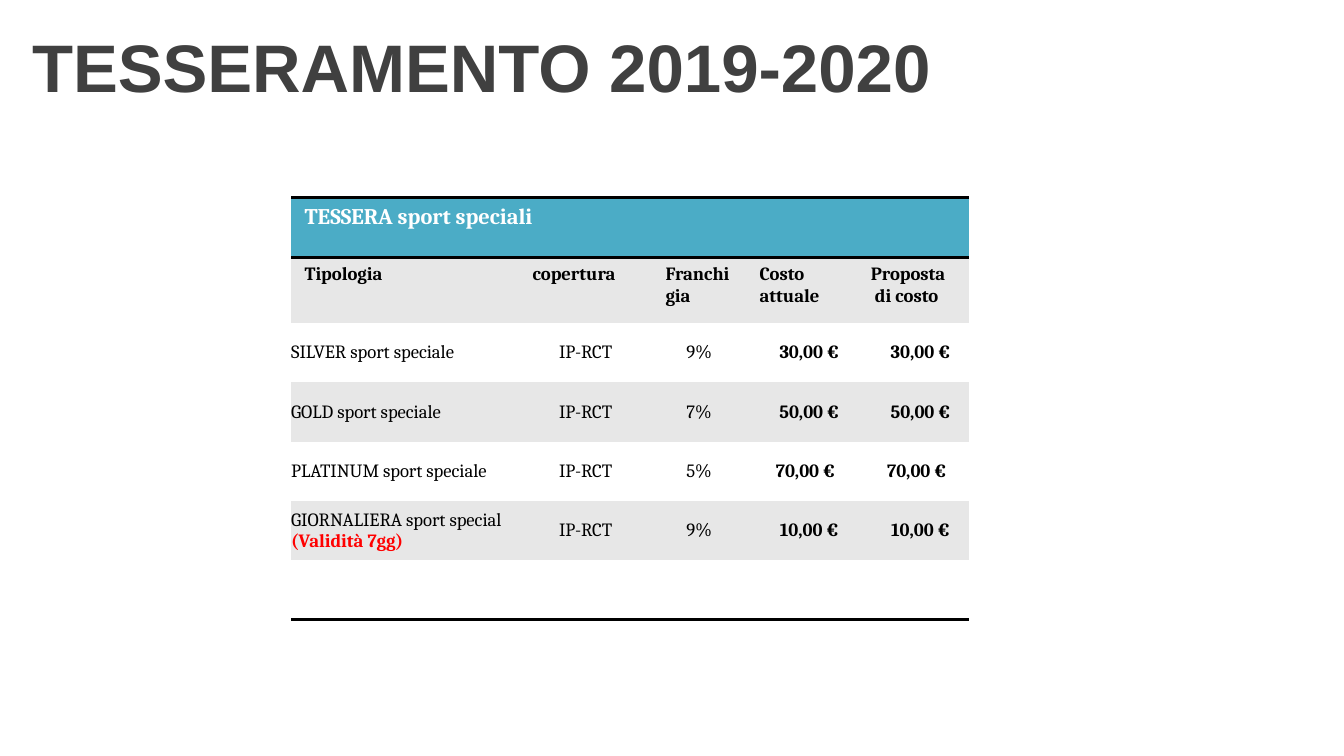
from dataclasses import dataclass

from lxml import etree
from pptx import Presentation
from pptx.dml.color import RGBColor
from pptx.enum.text import MSO_ANCHOR, PP_ALIGN
from pptx.oxml.ns import qn
from pptx.util import Pt

LEFT, CENTER = PP_ALIGN.LEFT, PP_ALIGN.CENTER
TOP, MIDDLE = MSO_ANCHOR.TOP, MSO_ANCHOR.MIDDLE

COLORS = {
    "title": "404040",
    "banner": "4BACC6",
    "band": "E7E7E7",
    "white": "FFFFFF",
    "black": "000000",
    "validity": "FF0000",
}
NO_TABLE_STYLE = "{2D5ABB26-0587-4C30-8999-92F81FD0307C}"
COLUMN_WIDTHS = (122.2, 71.2, 50.4, 59.6, 59.6)
ROW_HEIGHT, HEADING_HEIGHT = 31.8, 35.4
RULE_WIDTH = 2

HEADING_MARGINS = dict(margin_left=Pt(7.2), margin_right=Pt(7.2),
                       margin_top=Pt(3.6), margin_bottom=Pt(3.6),
                       vertical_anchor=TOP)
BODY_MARGINS = dict(margin_left=0, margin_right=0, margin_top=0,
                    margin_bottom=0, vertical_anchor=MIDDLE)


@dataclass
class Line:
    text: str
    bold: bool = False
    color: str = "black"
    size: float = 10
    align: int = LEFT
    indent: float = 0


@dataclass
class Card:
    name: str
    deductible: str
    cost: str
    price_shift: float = 8
    validity: str = ""


HEADINGS = (
    [Line("Tipologia", bold=True)],
    [Line("copertura", bold=True)],
    [Line("Franchigia", bold=True)],
    [Line("Costo", bold=True), Line("attuale", bold=True)],
    [Line("Proposta", bold=True), Line("di costo", bold=True, indent=2.2)],
)
CARDS = (
    Card("SILVER sport speciale", "9%", "30,00 €"),
    Card("GOLD sport speciale", "7%", "50,00 €"),
    Card("PLATINUM sport speciale", "5%", "70,00 €", price_shift=4),
    Card("GIORNALIERA sport special", "9%", "10,00 €", validity="(Validità 7gg)"),
)


def set_all(target, values: dict) -> None:
    for name, value in values.items():
        setattr(target, name, value)


def format_font(font, name: str, size: float, bold: bool, color: str) -> None:
    set_all(font, dict(name=name, size=Pt(size), bold=bold))
    font.color.rgb = RGBColor.from_string(COLORS[color])


def write_cell(cell, lines: list[Line], margins: dict) -> None:
    set_all(cell, margins)
    frame = cell.text_frame
    for index, line in enumerate(lines):
        paragraph = frame.add_paragraph() if index else frame.paragraphs[0]
        paragraph.alignment = line.align
        if line.indent:
            paragraph._p.get_or_add_pPr().set("marL", str(Pt(line.indent)))
        run = paragraph.add_run()
        run.text = line.text
        format_font(run.font, "Cambria", line.size, line.bold, line.color)


def fill_row(row, color: str) -> None:
    for cell in row.cells:
        cell.fill.solid()
        cell.fill.fore_color.rgb = RGBColor.from_string(COLORS[color])


def rule_row(row, *sides: str) -> None:
    """Draw black rules on the given sides, in the order lnT, lnB."""
    for cell in row.cells:
        properties = cell._tc.get_or_add_tcPr()
        for position, side in enumerate(sides):
            rule = etree.Element(qn(f"a:{side}"), w=str(Pt(RULE_WIDTH)))
            fill = etree.SubElement(rule, qn("a:solidFill"))
            etree.SubElement(fill, qn("a:srgbClr"), val=COLORS["black"])
            properties.insert(position, rule)


def write_card(row, card: Card) -> None:
    names = [Line(card.name)]
    if card.validity:
        names.append(Line(card.validity, bold=True, color="validity"))
    price = [Line(card.cost, bold=True, align=CENTER)]
    price_margins = BODY_MARGINS | dict(margin_left=Pt(card.price_shift))
    contents = (
        (names, BODY_MARGINS),
        ([Line("IP-RCT", align=CENTER)], BODY_MARGINS),
        ([Line(card.deductible, align=CENTER)], BODY_MARGINS),
        (price, price_margins),
        (price, price_margins),
    )
    for cell, (lines, margins) in zip(row.cells, contents):
        write_cell(cell, lines, margins)


def add_title(slide, text: str) -> None:
    title = slide.shapes.title
    set_all(title, dict(left=0, top=0, width=Pt(720), height=Pt(70)))
    frame = title.text_frame
    set_all(frame, dict(margin_left=Pt(17.2), vertical_anchor=MIDDLE, word_wrap=True))
    frame.text = text
    paragraph = frame.paragraphs[0]
    paragraph.alignment = LEFT
    format_font(paragraph.runs[0].font, "Arial", 36, True, "title")


def add_price_table(slide) -> None:
    heights = [ROW_HEIGHT, HEADING_HEIGHT] + [ROW_HEIGHT] * (len(CARDS) + 1)
    table = slide.shapes.add_table(
        len(heights), len(COLUMN_WIDTHS), Pt(156), Pt(106),
        Pt(sum(COLUMN_WIDTHS)), Pt(sum(heights))).table
    set_all(table, dict(first_row=False, horz_banding=False))
    table._tbl.tblPr.find(qn("a:tableStyleId")).text = NO_TABLE_STYLE
    for column, width in zip(table.columns, COLUMN_WIDTHS):
        column.width = Pt(width)
    for index, (row, height) in enumerate(zip(table.rows, heights)):
        row.height = Pt(height)
        fill_row(row, "band" if index % 2 else "white")

    # Banner row
    banner, headings, *card_rows, closing = table.rows
    fill_row(banner, "banner")
    rule_row(banner, "lnT", "lnB")
    table.cell(0, 0).merge(table.cell(0, 3))
    write_cell(table.cell(0, 0),
               [Line("TESSERA sport speciali", bold=True, color="white", size=12)],
               HEADING_MARGINS)

    # Column headings and cards
    for cell, lines in zip(headings.cells, HEADINGS):
        write_cell(cell, lines, HEADING_MARGINS)
    for row, card in zip(card_rows, CARDS):
        write_card(row, card)

    # Empty closing row
    rule_row(closing, "lnB")
    last = len(heights) - 1
    for start in (0, 2):
        table.cell(last, start).merge(table.cell(last, start + 1))


def main() -> None:
    presentation = Presentation()
    set_all(presentation, dict(slide_width=Pt(720), slide_height=Pt(405)))
    slide = presentation.slides.add_slide(presentation.slide_layouts[5])
    add_title(slide, "TESSERAMENTO 2019-2020")
    add_price_table(slide)
    presentation.save("out.pptx")


if __name__ == "__main__":
    main()
